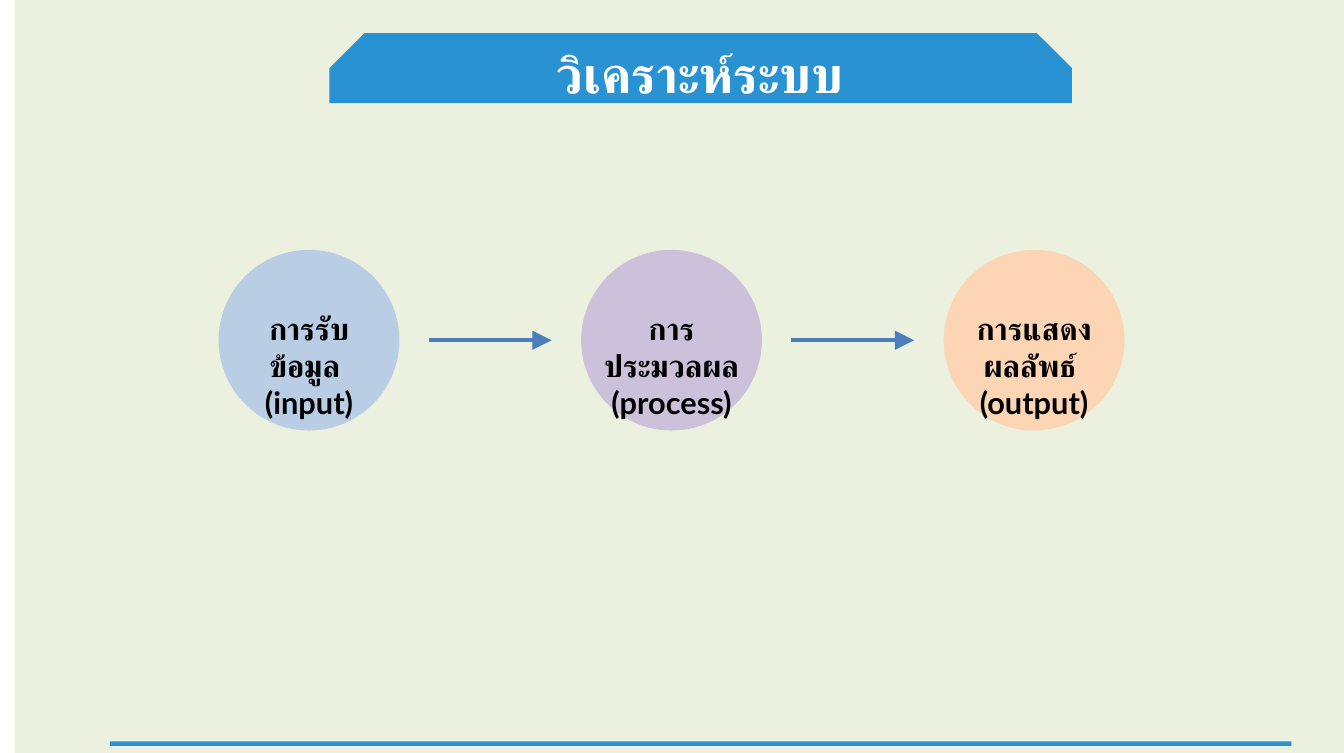
from lxml import etree
from pptx import Presentation
from pptx.dml.color import RGBColor
from pptx.enum.shapes import MSO_CONNECTOR as CONNECTOR, MSO_SHAPE as SHAPE
from pptx.enum.text import MSO_ANCHOR as ANCHOR, MSO_AUTO_SIZE as AUTO_SIZE, PP_ALIGN as ALIGN
from pptx.oxml.ns import qn
from pptx.util import Inches, Pt

WIDTH, HEIGHT = Pt(1049), Pt(588)
MARGIN = 0.16
FONT = "Lato"
BLUE = "2992D2"
DIAMETER, PITCH = 1.96, 3.93
ARROW_GAP = 0.32
STEPS = [
    ("การรับข้อมูล ", "(input)", "B9CDE5", 1.42),
    ("การประมวลผล ", "(process)", "CCC1DA", 1.73),
    ("การแสดงผลลัพธ์ ", "(output)", "FCD5B5", 1.94),
]


def color(value):
    return RGBColor.from_string(value)


def inches(*lengths):
    return [Inches(length) for length in lengths]


def add_filled(page, kind, box, fill):
    shape = page.shapes.add_shape(kind, *inches(*box))
    shape.shadow.inherit = False
    shape.fill.solid()
    shape.fill.fore_color.rgb = color(fill)
    shape.line.fill.background()
    return shape


def write(frame, lines, size, ink, insets):
    frame.text = "\n".join(lines)
    frame.word_wrap = True
    frame.auto_size = AUTO_SIZE.NONE
    frame.vertical_anchor = ANCHOR.TOP
    side, top = inches(*insets)
    frame.margin_left = frame.margin_right = side
    frame.margin_top = frame.margin_bottom = top
    for para in frame.paragraphs:
        para.alignment = ALIGN.CENTER
        for span in para.runs:
            span.font.name = FONT
            span.font.size = Pt(size)
            span.font.bold = True
            span.font.color.rgb = color(ink)


def add_banner(page, box):
    left, top, width, height = box
    banner = add_filled(page, SHAPE.SNIP_2_SAME_RECTANGLE, box, BLUE)
    banner.adjustments[0] = 0.5
    banner.adjustments[1] = 0
    title = page.shapes.title
    title.left, title.top, title.width, title.height = inches(
        left + 0.51, top + 0.05, width - 1.04, height + 0.01)
    write(title.text_frame, ["วิเคราะห์ระบบ"], 40, "FFFFFF", (0.1, 0.05))
    banner._element.addnext(title._element)


def add_step(page, left, top, step):
    name, term, fill, label_width = step
    add_filled(page, SHAPE.OVAL, (left, top, DIAMETER, DIAMETER), fill)
    label_left = left + (DIAMETER - label_width) / 2
    label = page.shapes.add_textbox(*inches(label_left, top + 0.59, label_width, 0.94))
    write(label.text_frame, [name, term], 24, "000000", (0.13, 0.06))


def add_arrow(page, start, end, y):
    arrow = page.shapes.add_connector(CONNECTOR.STRAIGHT, *inches(start, y, end, y))
    arrow.line.color.rgb = color("4B7EBC")
    arrow.line.width = Pt(3)
    etree.SubElement(arrow.line._get_or_add_ln(), qn("a:tailEnd"),
                     type="triangle", w="lg", len="lg")
    etree.SubElement(arrow._element.spPr, qn("a:effectLst"))


def add_flow(page, left, top):
    for index, step in enumerate(STEPS):
        step_left = left + index * PITCH
        add_step(page, step_left, top, step)
        if index:
            add_arrow(page, step_left - PITCH + DIAMETER + ARROW_GAP,
                      step_left - ARROW_GAP, top + DIAMETER / 2)


def main():
    deck = Presentation()
    deck.slide_width, deck.slide_height = WIDTH, HEIGHT
    page = deck.slides.add_slide(deck.slide_layouts.get_by_name("Title Only"))
    add_filled(page, SHAPE.RECTANGLE, (MARGIN, 0, WIDTH.inches, HEIGHT.inches), "EBF1DE")
    add_banner(page, (3.57, 0.36, 8.05, 0.76))
    add_filled(page, SHAPE.RECTANGLE, (1.19, 8.04, 12.81, 0.05), BLUE)
    add_flow(page, 2.37, 2.71)
    deck.save("out.pptx")


if __name__ == "__main__":
    main()
